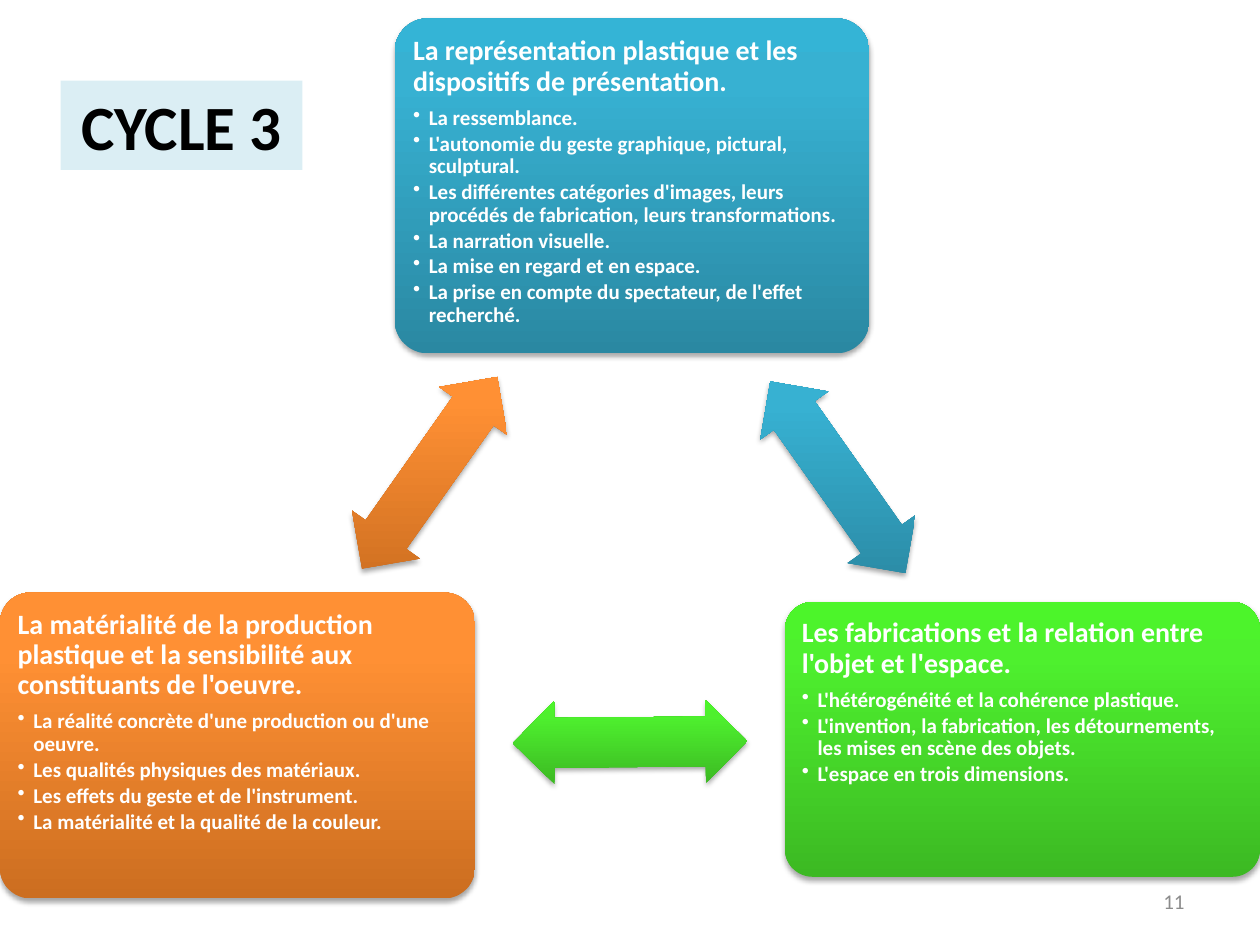
from lxml.etree import SubElement
from pptx import Presentation
from pptx.dml.color import RGBColor
from pptx.enum.shapes import MSO_SHAPE
from pptx.enum.text import MSO_ANCHOR, PP_ALIGN
from pptx.oxml import parse_xml
from pptx.oxml.ns import nsdecls, qn
from pptx.util import Pt

# Content
BLUE = ("2A88A2", "37B1D2", "34B4D6")
GREEN = ("3CB923", "4EF02E", "4CF52A")
ORANGE = ("CC6E20", "FF9034", "FF9136")
STOPS = (0, 80, 100)

CARD_WIDTH = 271.4
ARROW_WIDTH, ARROW_HEIGHT = 134, 47.5

# Each theme: colours, card (left, top, height), arrow (left, top, rotation), texts
THEMES = [
    dict(colours=BLUE, card=(225.5, 10.5, 191.5), arrow=(411.8, 249, 54.8),
         heading="La représentation plastique et les dispositifs de présentation.",
         points=["La ressemblance.",
                 "L'autonomie du geste graphique, pictural, sculptural.",
                 "Les différentes catégories d'images, leurs procédés de "
                 "fabrication, leurs transformations.",
                 "La narration visuelle.",
                 "La mise en regard et en espace.",
                 "La prise en compte du spectateur, de l'effet recherché."]),
    dict(colours=GREEN, card=(448.6, 344, 157), arrow=(293, 400.3, 179.5),
         heading="Les fabrications et la relation entre l'objet et l'espace.",
         points=["L'hétérogénéité et la cohérence plastique.",
                 "L'invention, la fabrication, les détournements, "
                 "les mises en scène des objets.",
                 "L'espace en trois dimensions."]),
    dict(colours=ORANGE, card=(0, 338.6, 174.8), arrow=(178.5, 246.4, 305.2),
         heading="La matérialité de la production plastique et la sensibilité "
                 "aux constituants de l'oeuvre.",
         points=["La réalité concrète d'une production ou d'une oeuvre.",
                 "Les qualités physiques des matériaux.",
                 "Les effets du geste et de l'instrument.",
                 "La matérialité et la qualité de la couleur."]),
]


def rgb(value):
    return RGBColor.from_string(value)


def set_font(para, size, colour, bold=False):
    font = para.font
    font.name, font.size, font.bold = "Calibri", Pt(size), bold
    font.color.rgb = rgb(colour)


def add_block(page, kind, left, top, width, height, colours):
    """Preset shape with a vertical gradient and a soft shadow below."""
    block = page.shapes.add_shape(kind, Pt(left), Pt(top), Pt(width), Pt(height))
    block.line.fill.background()
    stops = "".join(
        f'<a:gs pos="{stop * 1000}"><a:srgbClr val="{colour}"/></a:gs>'
        for stop, colour in zip(STOPS, colours))
    gradient = parse_xml(
        f'<a:gradFill {nsdecls("a")} rotWithShape="0"><a:gsLst>{stops}</a:gsLst>'
        '<a:lin ang="16200000" scaled="0"/></a:gradFill>')
    shadow = parse_xml(
        f'<a:effectLst {nsdecls("a")}><a:outerShdw blurRad="{Pt(3.1)}" '
        f'dist="{Pt(1.8)}" dir="5400000" rotWithShape="0">'
        '<a:srgbClr val="000000"><a:alpha val="35000"/></a:srgbClr>'
        '</a:outerShdw></a:effectLst>')
    properties = block.element.spPr
    properties.find(qn("a:prstGeom")).addnext(gradient)
    properties.find(qn("a:ln")).addnext(shadow)
    return block


def add_paragraph(frame, text, size, space_after, bullet=False):
    para = frame.add_paragraph() if frame.text else frame.paragraphs[0]
    para.text = text
    para.alignment = PP_ALIGN.LEFT
    para.line_spacing = 0.9
    para.space_after = Pt(space_after)
    set_font(para, size, "FFFFFF", bold=True)
    if bullet:
        para.level = 1
        properties = para._p.get_or_add_pPr()
        properties.set("marL", str(Pt(9)))
        properties.set("indent", str(Pt(-9)))
        mark = SubElement(properties, qn("a:buChar"), char="•")
        properties.find(qn("a:defRPr")).addprevious(mark)


def add_theme(page, theme):
    left, top, height = theme["card"]
    card = add_block(page, MSO_SHAPE.ROUNDED_RECTANGLE, left, top,
                     CARD_WIDTH, height, theme["colours"])
    card.adjustments[0] = 0.1
    frame = card.text_frame
    frame.word_wrap = True
    frame.vertical_anchor = MSO_ANCHOR.TOP
    frame.margin_left = frame.margin_right = Pt(5)
    frame.margin_top = frame.margin_bottom = Pt(5)
    add_paragraph(frame, theme["heading"], 16, 5.6)
    for point in theme["points"]:
        add_paragraph(frame, point, 12, 1.8, bullet=True)

    left, top, rotation = theme["arrow"]
    arrow = add_block(page, MSO_SHAPE.LEFT_RIGHT_ARROW, left, top,
                      ARROW_WIDTH, ARROW_HEIGHT, theme["colours"])
    arrow.adjustments[0], arrow.adjustments[1] = 0.6, 0.5
    arrow.rotation = rotation


def main():
    deck = Presentation()
    deck.slide_width, deck.slide_height = Pt(720), Pt(540)
    page = deck.slides.add_slide(deck.slide_layouts[6])

    # Three linked themes
    for theme in THEMES:
        add_theme(page, theme)

    # Title
    title = page.shapes.add_shape(MSO_SHAPE.RECTANGLE, Pt(34.6), Pt(46.1),
                                  Pt(138.2), Pt(51))
    title.shadow.inherit = False
    title.fill.solid()
    title.fill.fore_color.rgb = rgb("DBEEF4")
    title.line.fill.background()
    para = title.text_frame.paragraphs[0]
    para.text = "CYCLE 3"
    para.alignment = PP_ALIGN.CENTER
    set_font(para, 36, "000000", bold=True)

    # Page number
    box = page.shapes.add_textbox(Pt(516), Pt(500.5), Pt(168), Pt(28.75))
    box.text_frame.word_wrap = True
    box.text_frame.vertical_anchor = MSO_ANCHOR.MIDDLE
    para = box.text_frame.paragraphs[0]
    para.text = "11"
    para.alignment = PP_ALIGN.RIGHT
    set_font(para, 12, "8C8C8C")

    deck.save("out.pptx")


if __name__ == "__main__":
    main()
